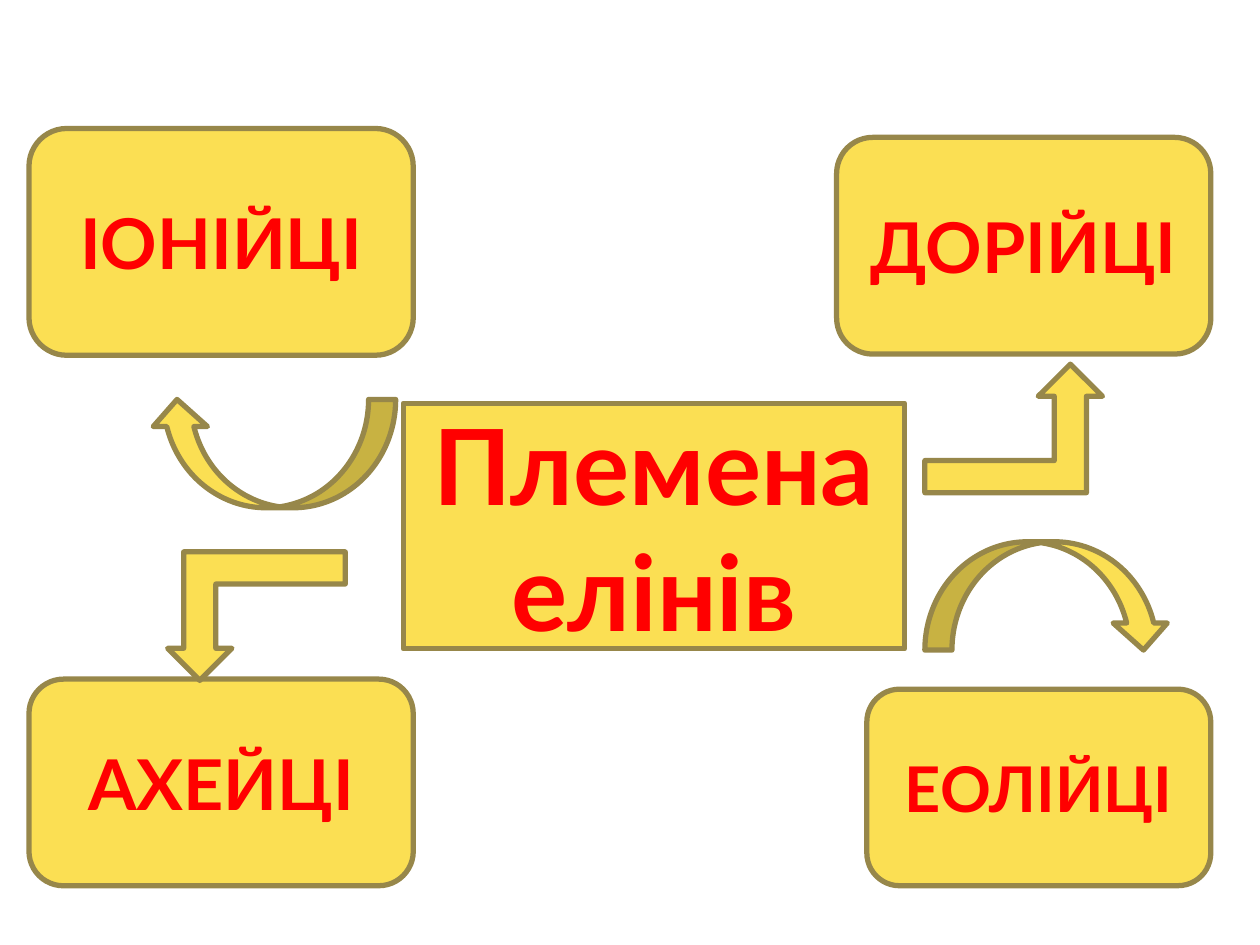
from pptx import Presentation
from pptx.dml.color import RGBColor
from pptx.enum.shapes import MSO_SHAPE as Kind
from pptx.enum.text import MSO_ANCHOR as Anchor, PP_ALIGN as Align
from pptx.util import Inches, Pt


def color(code):
    return RGBColor.from_string(code)


def draw(kind, box, turn=0):
    """Add a yellow shape with a brown outline; box is in inches."""
    shape = slide.shapes.add_shape(kind, *map(Inches, box))
    shape.rotation = turn
    shape.shadow.inherit = False
    shape.fill.solid()
    shape.fill.fore_color.rgb = color("FBDF53")
    shape.line.color.rgb = color("97874A")
    shape.line.width = Pt(3)
    return shape


prs = Presentation()
prs.slide_width, prs.slide_height = Inches(10), Inches(7.5)
slide = prs.slides.add_slide(prs.slide_layouts[6])

labels = [
    (Kind.RECTANGLE, (3.2, 3.2, 3.98, 1.95), 60, ["Племена", "елінів"]),
    (Kind.ROUNDED_RECTANGLE, (0.23, 1.02, 3.05, 1.8), 40, ["ІОНІЙЦІ"]),
    (Kind.ROUNDED_RECTANGLE, (0.23, 5.39, 3.05, 1.64), 40, ["АХЕЙЦІ"]),
    (Kind.ROUNDED_RECTANGLE, (6.88, 5.47, 2.73, 1.56), 36, ["ЕОЛІЙЦІ"]),
    (Kind.ROUNDED_RECTANGLE, (6.64, 1.09, 2.97, 1.72), 40, ["ДОРІЙЦІ"]),
]
for kind, box, size, lines in labels:
    frame = draw(kind, box).text_frame
    frame.word_wrap = True
    frame.vertical_anchor = Anchor.MIDDLE
    frame.text = "\n".join(lines)
    style = {"name": "Lato", "size": Pt(size), "bold": True}
    for para in frame.paragraphs:
        para.alignment = Align.CENTER
        font = para.runs[0].font
        for key, value in style.items():
            setattr(font, key, value)
        font.color.rgb = color("FF0000")

arrows = [
    (Kind.BENT_UP_ARROW, (7.34, 2.89, 1.41, 1.02), 0),
    (Kind.BENT_UP_ARROW, (1.33, 4.38, 1.41, 1.02), 180),
    (Kind.CURVED_DOWN_ARROW, (7.34, 4.3, 1.95, 0.86), 0),
    (Kind.CURVED_DOWN_ARROW, (1.19, 3.17, 1.95, 0.86), 180),
]
for kind, box, turn in arrows:
    draw(kind, box, turn)

prs.save("out.pptx")
